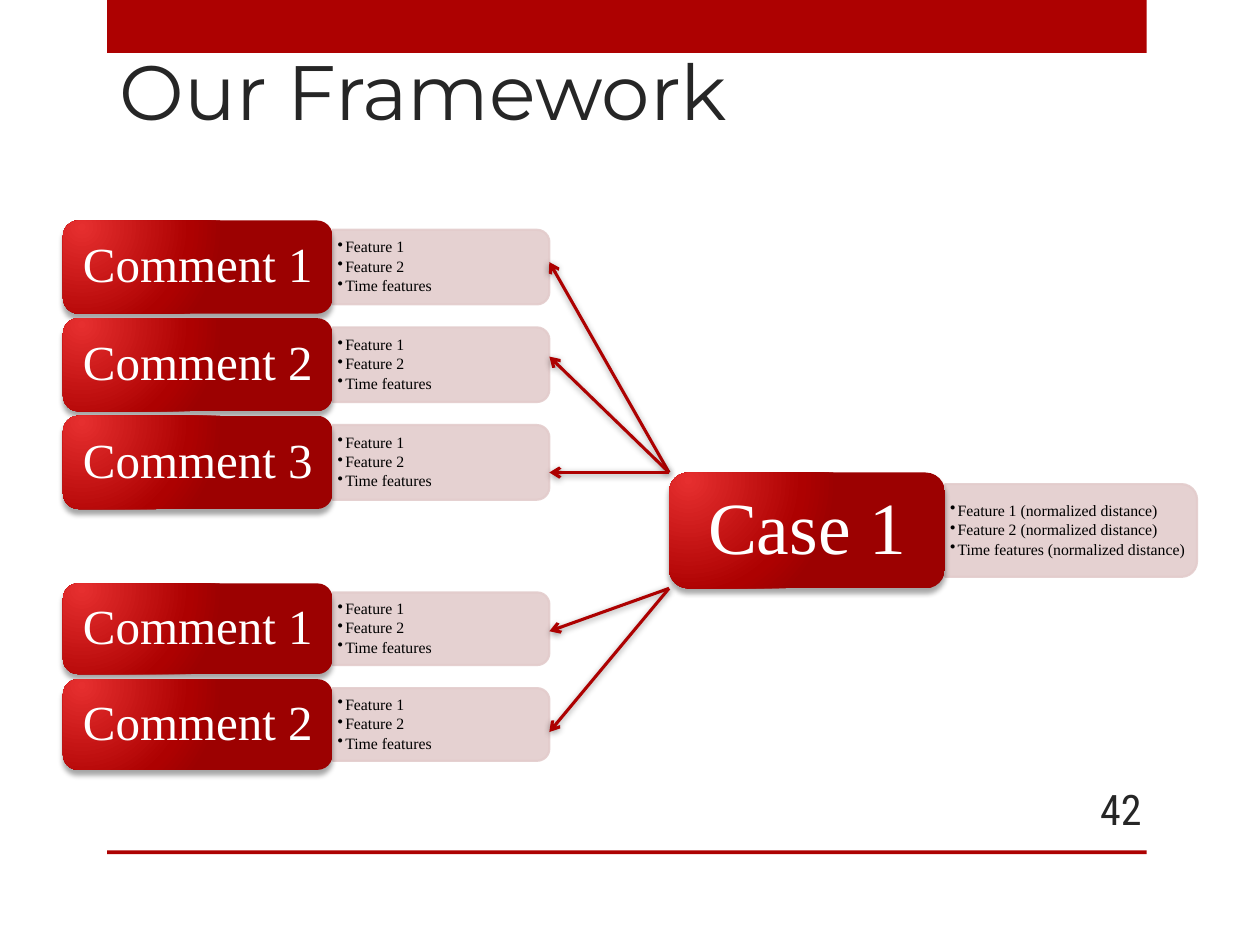
import pptx
import pptx.util
import pptx.oxml
import pptx.oxml.ns
from pptx.dml.color import RGBColor
from pptx.enum.shapes import MSO_CONNECTOR, MSO_SHAPE
from pptx.enum.text import MSO_ANCHOR, MSO_AUTO_SIZE, PP_ALIGN

Inches, Pt = pptx.util.Inches, pptx.util.Pt
qn = pptx.oxml.ns.qn
NS = pptx.oxml.ns.nsdecls("a")

COLORS = {"red": "AD0101", "bright": "E62F2F", "deep": "9C0101", "pink": "E3CCCC",
          "ink": "262626", "black": "000000", "white": "FFFFFF"}
SERIF = "Times New Roman"

# Columns and rows, in inches
BAND_LEFT, BAND_W = 0.85, 8.25
LABEL_LEFT, LABEL_W, PANEL_W = 0.5, 2.14, 1.72
CASE_LEFT, CASE_TOP, CASE_W, CASE_H, CASE_PANEL_W = 5.31, 3.75, 2.19, 0.92, 2
ARROW_END = 4.36
# (first top, row pitch, label height, number of comments)
STACKS = [(1.75, 0.775, 0.74, 3), (4.63, 0.76, 0.72, 2)]
# (start height, end heights)
ARROWS = [(CASE_TOP, [2.08, 2.83, 3.75]), (CASE_TOP + CASE_H, [5.01, 5.81])]
FEATURES = ["Feature 1", "Feature 2", "Time features"]


def rgb(name):
    return RGBColor.from_string(COLORS[name])


def box(*lengths):
    return [Inches(n) for n in lengths]


def style(p, font, size, color, align=PP_ALIGN.LEFT):
    p.alignment = align
    for r in p.runs:
        r.font.name, r.font.size = font, Pt(size)
        r.font.color.rgb = rgb(color)


def set_frame(tf, anchor, inset_x, inset_y):
    tf.word_wrap = True
    tf.auto_size = MSO_AUTO_SIZE.NONE
    tf.vertical_anchor = anchor
    tf.margin_left = tf.margin_right = Inches(inset_x)
    tf.margin_top = tf.margin_bottom = Inches(inset_y)


def add_shadow(effects, alpha, blur, dist, angle):
    effects.append(pptx.oxml.parse_xml(
        f'<a:outerShdw {NS} blurRad="{Pt(blur)}" dist="{Pt(dist)}" dir="{angle * 60000}" '
        f'rotWithShape="0"><a:srgbClr val="{COLORS["black"]}">'
        f'<a:alpha val="{alpha * 1000}"/></a:srgbClr></a:outerShdw>'))


def add_band(s, top, height):
    sp = s.shapes.add_shape(MSO_SHAPE.RECTANGLE, *box(BAND_LEFT, top, BAND_W, height))
    sp.shadow.inherit = False
    sp.fill.solid()
    sp.fill.fore_color.rgb = rgb("red")
    sp.line.fill.background()


def add_panel(s, left, top, width, height, lines):
    # The rounded ends face right, so the shape is turned by a quarter
    sp = s.shapes.add_shape(
        MSO_SHAPE.ROUND_2_SAME_RECTANGLE,
        *box(left + (width - height) / 2, top + (height - width) / 2, height, width))
    sp.rotation = 90
    sp.shadow.inherit = False
    sp.line.width = Pt(1.25)
    sp.fill.solid()
    sp.line.fill.solid()
    for color in (sp.fill.fore_color, sp.line.color):
        color.rgb = rgb("pink")
    for clr in sp._element.spPr.iter(qn("a:srgbClr")):
        clr.append(pptx.oxml.parse_xml(f'<a:alpha {NS} val="90000"/>'))

    # Bulleted features
    tf = s.shapes.add_textbox(*box(left, top + 0.03, width - 0.03, height - 0.06)).text_frame
    set_frame(tf, MSO_ANCHOR.MIDDLE, 0.04, 0.02)
    tf.text = "\n".join(lines)
    for p in tf.paragraphs:
        style(p, SERIF, 9, "black")
        p.line_spacing = 0.9
        p.space_after = Pt(1.35)
        pPr = p._p.get_or_add_pPr()
        pPr.set("marL", str(Inches(0.06)))
        pPr.set("indent", str(-Inches(0.06)))
        pPr.append(pptx.oxml.parse_xml(f'<a:buChar {NS} char="•"/>'))


def add_label(s, left, top, width, height, text, size):
    sp = s.shapes.add_shape(MSO_SHAPE.ROUNDED_RECTANGLE, *box(left, top, width, height))
    sp.line.fill.background()
    sp.fill.gradient()
    stops = "".join(f'<a:gs pos="{pos * 1000}"><a:srgbClr val="{COLORS[name]}"/></a:gs>'
                    for pos, name in [(0, "bright"), (76, "red"), (100, "deep")])
    spPr = sp._element.spPr
    spPr.replace(spPr.find(qn("a:gradFill")), pptx.oxml.parse_xml(
        f'<a:gradFill {NS} rotWithShape="1"><a:gsLst>{stops}</a:gsLst><a:path path="circle">'
        '<a:fillToRect l="15000" t="15000" r="100000" b="100000"/></a:path></a:gradFill>'))
    sp.shadow.inherit = False
    add_shadow(spPr.find(qn("a:effectLst")), 35, 3, 3, 90)
    tf = sp.text_frame
    set_frame(tf, MSO_ANCHOR.MIDDLE, 0.12, 0.06)
    tf.text = text
    style(tf.paragraphs[0], SERIF, size, "white", PP_ALIGN.CENTER)
    tf.paragraphs[0].line_spacing = 0.9


def add_card(s, left, top, width, height, panel_w, text, size, lines):
    add_panel(s, left + width, top + 0.1 * height, panel_w, 0.8 * height, lines)
    add_label(s, left, top, width, height, text, size)


def add_arrow(s, start_y, end_y):
    line = s.shapes.add_connector(MSO_CONNECTOR.STRAIGHT,
                                  *box(CASE_LEFT, start_y, ARROW_END, end_y))
    line.line.width = Pt(1.75)
    line.line.color.rgb = rgb("red")
    line.line._get_or_add_ln().append(pptx.oxml.parse_xml(f'<a:tailEnd {NS} type="arrow"/>'))
    effects = pptx.oxml.parse_xml(f"<a:effectLst {NS}/>")
    line._element.spPr.append(effects)
    add_shadow(effects, 40, 4, 1, 88)


def add_title(s, text):
    title = s.shapes.title
    title.left, title.top, title.width, title.height = box(BAND_LEFT, 0.13, 7.42, 1)
    set_frame(title.text_frame, MSO_ANCHOR.BOTTOM, 0.1, 0.05)
    title.text_frame.text = text
    style(title.text_frame.paragraphs[0], "Montserrat", 44, "ink")


def add_page_number(s, text):
    tf = s.shapes.add_textbox(*box(8.33, 6.22, 0.83, 0.4)).text_frame
    set_frame(tf, MSO_ANCHOR.MIDDLE, 0.1, 0.05)
    tf.text = text
    style(tf.paragraphs[0], "Roboto Condensed", 24, "ink", PP_ALIGN.RIGHT)


def main():
    prs = pptx.Presentation()
    prs.slide_width, prs.slide_height = box(10, 7.5)
    s = prs.slides.add_slide(prs.slide_layouts[5])

    # Frame of the page
    add_band(s, 0, 0.42)
    add_band(s, 6.75, 0.03)
    add_title(s, "Our Framework")
    add_page_number(s, "42")

    # Comment stacks and the case they belong to
    for top, pitch, height, count in STACKS:
        for i in range(count):
            add_card(s, LABEL_LEFT, top + i * pitch, LABEL_W, height, PANEL_W,
                     f"Comment {i + 1}", 28, FEATURES)
    add_card(s, CASE_LEFT, CASE_TOP, CASE_W, CASE_H, CASE_PANEL_W, "Case 1", 42,
             [f"{name} (normalized distance)" for name in FEATURES])

    # Arrows from the case's corners to the comments
    for start_y, ends in ARROWS:
        for end_y in ends:
            add_arrow(s, start_y, end_y)

    prs.save("out.pptx")


if __name__ == "__main__":
    main()
